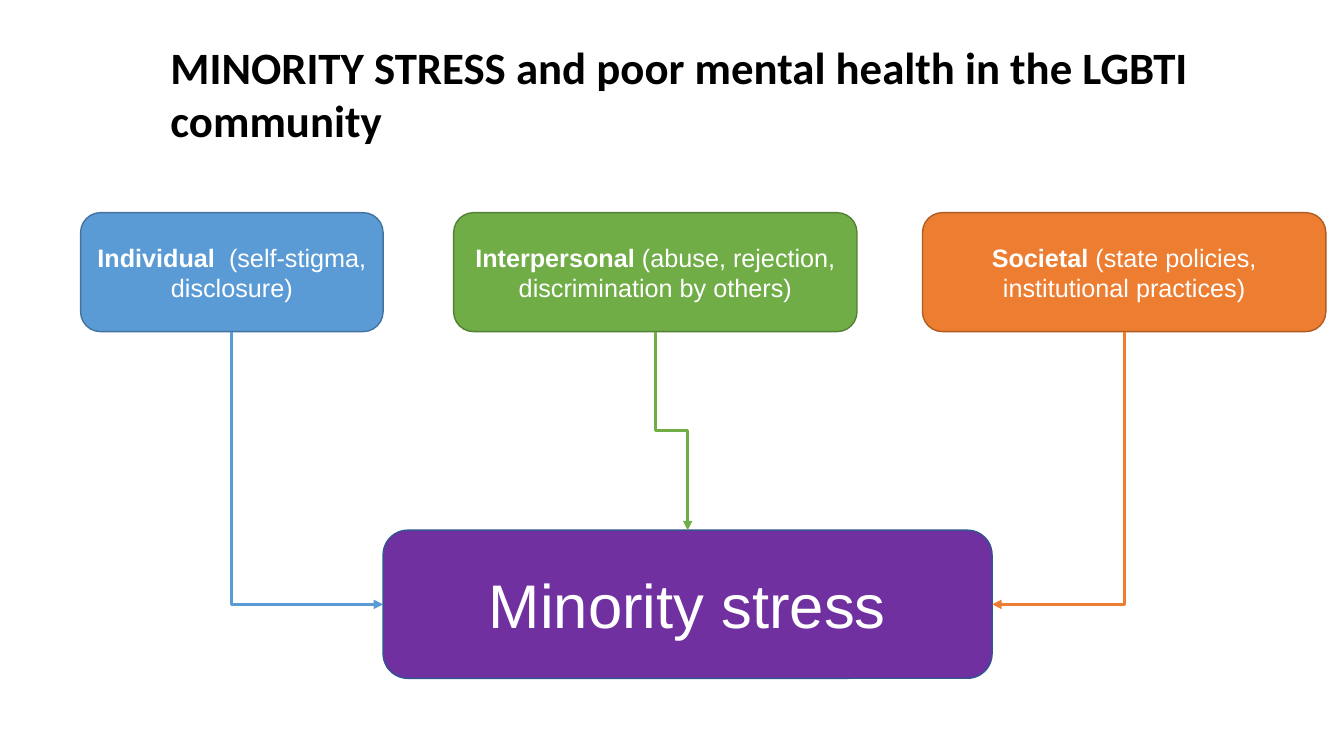
from lxml.etree import SubElement
from pptx import Presentation
from pptx.dml.color import RGBColor
from pptx.enum.shapes import MSO_CONNECTOR, MSO_SHAPE
from pptx.enum.text import MSO_ANCHOR, MSO_AUTO_SIZE, PP_ALIGN
from pptx.oxml.ns import qn
from pptx.util import Inches, Pt

TITLE = "MINORITY STRESS and poor mental health in the LGBTI community"
OUTCOME = "Minority stress"
# level, examples, left, width, fill, outline, side of the outcome box reached
FACTORS = [
    ("Individual  ", "(self-stigma, disclosure)", 0.8, 3, "5B9BD5", "43739E", "left"),
    ("Interpersonal ", "(abuse, rejection, discrimination by others)",
     4.5, 4, "70AD47", "538035", "top"),
    ("Societal ", "(state policies, institutional practices)",
     9.15, 4, "ED7D31", "AF5C24", "right"),
]
FACTOR_TOP, FACTOR_HEIGHT = 2.11, 1.18
OUTCOME_BOX = (3.8, 5.26, 6.04, 1.47)
SITES = {"top": 0, "left": 1, "bottom": 2, "right": 3}


def color(value):
    return RGBColor.from_string(value)


def write(frame, runs, size, font="Arial", fill="FFFFFF", align=PP_ALIGN.CENTER,
          anchor=MSO_ANCHOR.MIDDLE):
    """Fill the frame with one paragraph of (text, bold) runs."""
    frame.word_wrap = True
    frame.vertical_anchor = anchor
    paragraph = frame.paragraphs[0]
    paragraph.alignment = align
    for text, bold in runs:
        run = paragraph.add_run()
        run.text = text
        run.font.name, run.font.size, run.font.bold = font, Pt(size), bold
        run.font.color.rgb = color(fill)


def add_box(slide, bounds, fill, outline):
    box = slide.shapes.add_shape(MSO_SHAPE.ROUNDED_RECTANGLE, *map(Inches, bounds))
    box.shadow.inherit = False
    box.fill.solid()
    box.fill.fore_color.rgb = color(fill)
    box.line.color.rgb = color(outline)
    box.line.width = Pt(1)
    return box


def add_arrow(slide, factor, outcome, side, stroke):
    """Elbow arrow that leaves the factor downwards and enters a side of the outcome."""
    start_x, start_y = factor.left + factor.width // 2, factor.top + factor.height
    end_x, end_y = {
        "left": (outcome.left, outcome.top + outcome.height // 2),
        "top": (outcome.left + outcome.width // 2, outcome.top),
        "right": (outcome.left + outcome.width, outcome.top + outcome.height // 2),
    }[side]
    arrow = slide.shapes.add_connector(MSO_CONNECTOR.ELBOW, start_x, start_y, end_x, end_y)
    arrow.begin_connect(factor, SITES["bottom"])
    arrow.end_connect(outcome, SITES[side])

    # A quarter turn makes the elbow start vertically: width and height swap
    properties = arrow._element.spPr
    rightward = end_x > start_x
    arrow.width, arrow.height = end_y - start_y, abs(end_x - start_x)
    arrow.left = (start_x + end_x - arrow.width) // 2
    arrow.top = (start_y + end_y - arrow.height) // 2
    arrow.rotation = 270 if rightward else 90
    properties.xfrm.flipH, properties.xfrm.flipV = rightward, False
    if side != "top":
        properties.find(qn("a:prstGeom")).set("prst", "bentConnector2")

    arrow.line.color.rgb = color(stroke)
    arrow.line.width = Pt(2.25)
    SubElement(properties.find(qn("a:ln")), qn("a:tailEnd"), type="triangle")
    SubElement(properties, qn("a:effectLst"))


def main():
    presentation = Presentation()
    presentation.slide_width, presentation.slide_height = Inches(13.33), Inches(7.5)
    slide = presentation.slides.add_slide(presentation.slide_layouts[5])

    title = slide.shapes.title
    title.left, title.top, title.width, title.height = map(
        Inches, (1.59, 0.34, 10.48, 1.18))
    write(title.text_frame, [(TITLE, True)], 32, "Calibri", "000000",
          PP_ALIGN.LEFT, MSO_ANCHOR.TOP)
    title.text_frame.auto_size = MSO_AUTO_SIZE.SHAPE_TO_FIT_TEXT

    outcome = add_box(slide, OUTCOME_BOX, "7030A0", "325491")
    write(outcome.text_frame, [(OUTCOME, False)], 44)

    for level, examples, left, width, fill, outline, side in FACTORS:
        factor = add_box(slide, (left, FACTOR_TOP, width, FACTOR_HEIGHT), fill, outline)
        write(factor.text_frame, [(level, True), (examples, False)], 18)
        add_arrow(slide, factor, outcome, side, fill)

    presentation.save("out.pptx")


if __name__ == "__main__":
    main()
